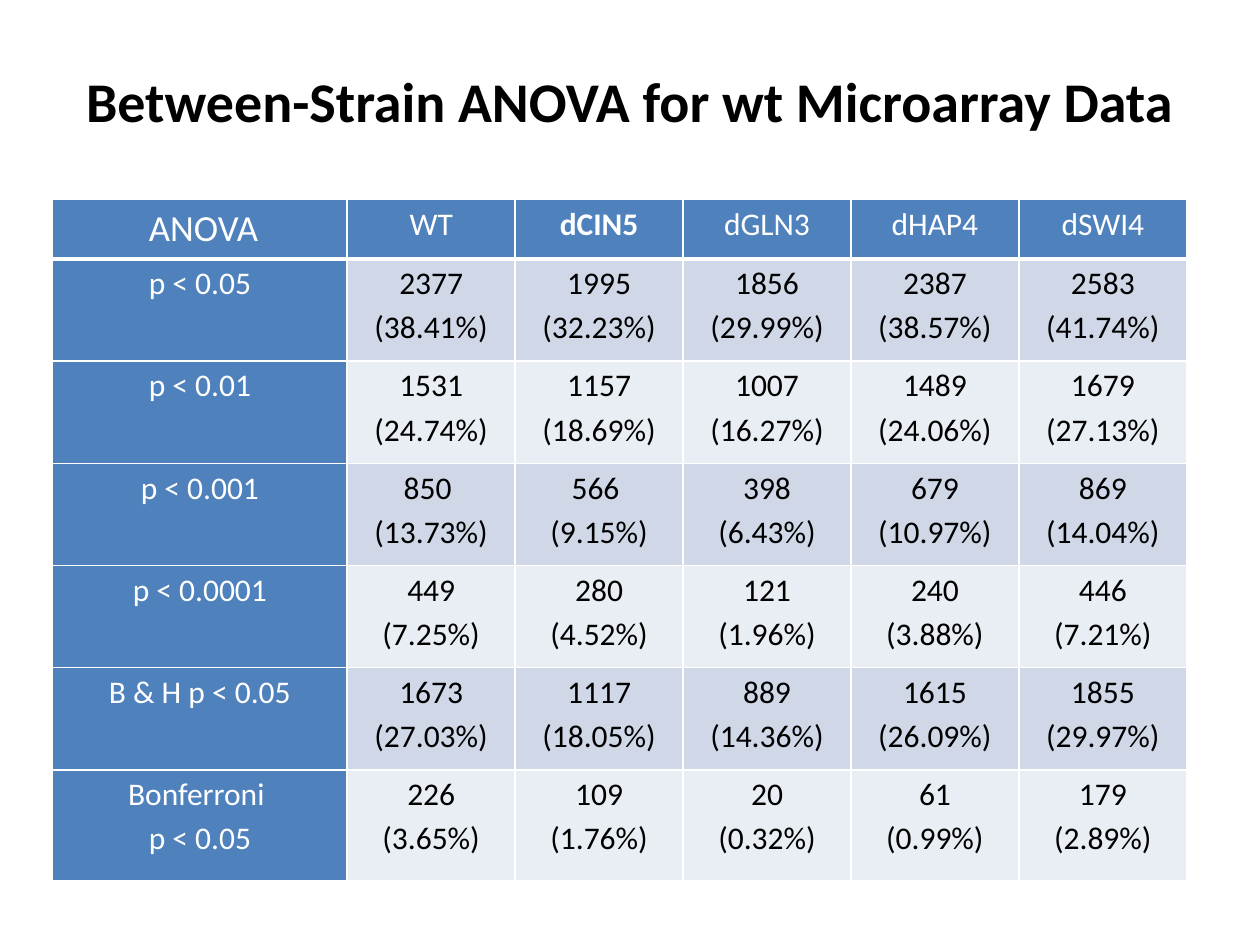
import pptx
import pptx.util
import pptx.dml.color
import pptx.enum.text
import pptx.oxml
import pptx.oxml.ns

Cm, Pt = pptx.util.Cm, pptx.util.Pt

# Content
TITLE = "Between-Strain ANOVA for wt Microarray Data"
CORNER = (" ", "ANOVA")
STRAINS = ["WT", "dCIN5", "dGLN3", "dHAP4", "dSWI4"]
BOLD_STRAIN = "dCIN5"
RESULTS = [
    ("p < 0.05", ["2377\n(38.41%)", "1995\n(32.23%)", "1856\n(29.99%)", "2387\n(38.57%)", "2583\n(41.74%)"]),
    ("p < 0.01", ["1531\n(24.74%)", "1157\n(18.69%)", "1007\n(16.27%)", "1489\n(24.06%)", "1679\n(27.13%)"]),
    ("p < 0.001", ["850 \n(13.73%)", "566 \n(9.15%)", "398\n(6.43%)", "679\n(10.97%)", "869\n(14.04%)"]),
    ("p < 0.0001", ["449\n(7.25%)", "280\n(4.52%)", "121\n(1.96%)", "240\n(3.88%)", "446\n(7.21%)"]),
    ("B & H p < 0.05", ["1673\n(27.03%)", "1117\n(18.05%)", "889\n(14.36%)", "1615\n(26.09%)", "1855\n(29.97%)"]),
    ("Bonferroni \np < 0.05", ["226\n(3.65%)", "109\n(1.76%)", "20\n(0.32%)", "61\n(0.99%)", "179\n(2.89%)"]),
]
COLORS = {"head": "4F81BD", "odd": "D0D8E8", "even": "E9EDF4", "light": "FFFFFF", "dark": "000000"}
FONT = "Calibri"

# Table geometry in centimetres
COL_WIDTHS = [5.94] + [3.385] * len(STRAINS)
ROW_HEIGHTS = [1.2] + [2.06] * (len(RESULTS) - 1) + [2.23]


def rgb(name):
    return pptx.dml.color.RGBColor.from_string(COLORS[name])


def style_run(r, size, color, bold=False):
    r.font.name = FONT
    r.font.size = Pt(size)
    r.font.bold = bold
    r.font.color.rgb = rgb(color)


def add_borders(cell, bottom):
    tc_pr = cell._tc.get_or_add_tcPr()
    for side, width in (("L", 1), ("R", 1), ("T", 1), ("B", bottom)):
        tc_pr.append(pptx.oxml.parse_xml(
            f'<a:ln{side} {pptx.oxml.ns.nsdecls("a")} w="{Pt(width)}"><a:solidFill>'
            f'<a:srgbClr val="{COLORS["light"]}"/></a:solidFill></a:ln{side}>'))


def fill_cell(cell, text, fill, color, bold=False, bottom=1):
    cell.margin_left = cell.margin_right = Cm(0.18)
    cell.margin_top = cell.margin_bottom = 0
    add_borders(cell, bottom)
    cell.fill.solid()
    cell.fill.fore_color.rgb = rgb(fill)
    cell.text_frame.text = text
    for p in cell.text_frame.paragraphs:
        p.alignment = pptx.enum.text.PP_ALIGN.CENTER
        p.line_spacing = 1.15
        for r in p.runs:
            style_run(r, 18, color, bold)


prs = pptx.Presentation()
prs.slide_width, prs.slide_height = Cm(25.4), Cm(19.05)
s = prs.slides.add_slide(prs.slide_layouts[6])

# Title
tf = s.shapes.add_textbox(Cm(1.27), Cm(0.43), Cm(22.86), Cm(3.18)).text_frame
tf.word_wrap = True
tf.vertical_anchor = pptx.enum.text.MSO_ANCHOR.MIDDLE
tf.text = TITLE
p = tf.paragraphs[0]
p.alignment = pptx.enum.text.PP_ALIGN.CENTER
style_run(p.runs[0], 32, "dark", True)

# Table grid
table = s.shapes.add_table(len(ROW_HEIGHTS), len(COL_WIDTHS), Cm(1.06), Cm(4.02),
                           Cm(sum(COL_WIDTHS)), Cm(sum(ROW_HEIGHTS))).table
for column, width in zip(table.columns, COL_WIDTHS):
    column.width = Cm(width)
for row, height in zip(table.rows, ROW_HEIGHTS):
    row.height = Cm(height)

# Header row, with a larger word in the corner
space, word = CORNER
fill_cell(table.cell(0, 0), space, "head", "dark", bottom=3)
r = table.cell(0, 0).text_frame.paragraphs[0].add_run()
r.text = word
style_run(r, 21, "light")
for j, strain in enumerate(STRAINS, 1):
    fill_cell(table.cell(0, j), strain, "head", "light", strain == BOLD_STRAIN, bottom=3)

# Banded result rows
for i, (threshold, counts) in enumerate(RESULTS, 1):
    fill_cell(table.cell(i, 0), threshold, "head", "light")
    for j, count in enumerate(counts, 1):
        fill_cell(table.cell(i, j), count, "odd" if i % 2 else "even", "dark")

prs.save("out.pptx")
